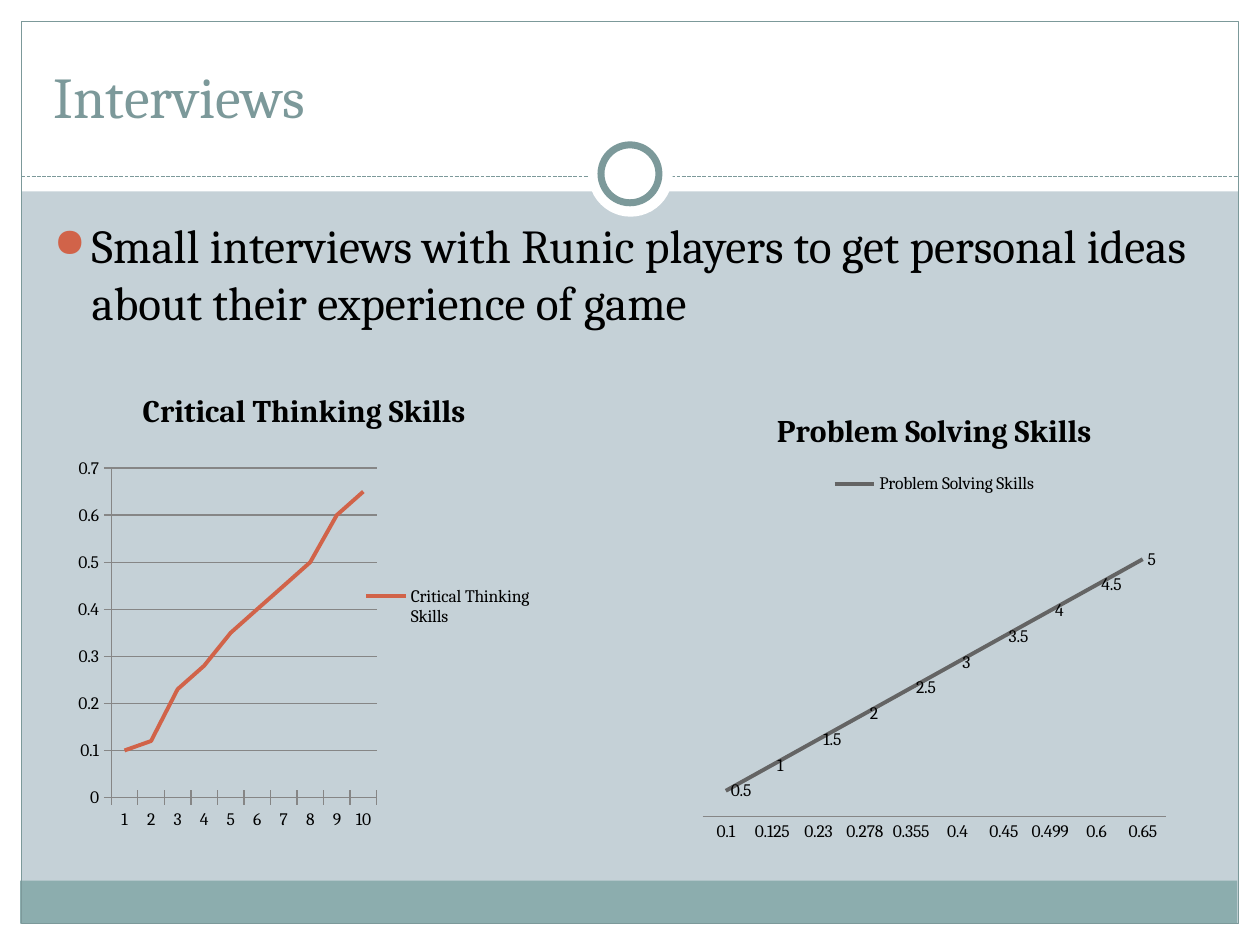
from lxml import etree
from pptx import Presentation
from pptx.chart.data import CategoryChartData
from pptx.dml.color import RGBColor
from pptx.enum.chart import (XL_CHART_TYPE, XL_LABEL_POSITION,
                             XL_LEGEND_POSITION, XL_TICK_MARK)
from pptx.enum.dml import MSO_LINE
from pptx.enum.shapes import MSO_CONNECTOR, MSO_SHAPE
from pptx.enum.text import MSO_ANCHOR
from pptx.oxml.ns import qn
from pptx.util import Inches, Pt

LINE = XL_CHART_TYPE.LINE
RIGHT, TOP = XL_LEGEND_POSITION.RIGHT, XL_LEGEND_POSITION.TOP
CROSS, NONE = XL_TICK_MARK.CROSS, XL_TICK_MARK.NONE
RECT, OVAL = MSO_SHAPE.RECTANGLE, MSO_SHAPE.OVAL
FONT = "Cambria"
COLORS = {
    "back": "C5D1D7", "white": "FFFFFF", "band": "8CADAE", "frame": "7C999A",
    "black": "000000", "red": "D16349", "gray": "646464", "axis": "868686",
}


def color(name):
    return RGBColor.from_string(COLORS[name])


def add_shape(slide, kind, box, fill=None, line=None, width=0.75):
    shape = slide.shapes.add_shape(kind, *map(Inches, box))
    shape.shadow.inherit = False
    if fill:
        shape.fill.solid()
        shape.fill.fore_color.rgb = color(fill)
    else:
        shape.fill.background()
    if line:
        shape.line.color.rgb = color(line)
        shape.line.width = Pt(width)
    else:
        shape.line.fill.background()


def add_rule(slide, left, right, y):
    rule = slide.shapes.add_connector(
        MSO_CONNECTOR.STRAIGHT, Inches(left), Inches(y), Inches(right), Inches(y))
    rule.line.color.rgb = color("frame")
    rule.line.width = Pt(0.75)
    rule.line.dash_style = MSO_LINE.SQUARE_DOT
    etree.SubElement(rule._element.spPr, qn("a:effectLst"))


def set_font(font, size, ink="black", bold=False):
    font.name, font.size, font.bold = FONT, Pt(size), bold
    font.color.rgb = color(ink)


def add_bullet(para, ink, scale, indent):
    props = para._p.get_or_add_pPr()
    props.set("marL", str(Inches(indent)))
    props.set("indent", str(-Inches(indent)))
    tint = etree.SubElement(props, qn("a:buClr"))
    etree.SubElement(tint, qn("a:srgbClr"), val=COLORS[ink])
    etree.SubElement(props, qn("a:buSzPct"), val=str(scale * 1000))
    etree.SubElement(props, qn("a:buChar"), char="●")


def add_text(slide, text, box, size, ink="black", anchor=MSO_ANCHOR.TOP,
             bullet=None, before=0):
    frame = slide.shapes.add_textbox(*map(Inches, box)).text_frame
    frame.word_wrap = True
    frame.vertical_anchor = anchor
    para = frame.paragraphs[0]
    para.space_before = Pt(before)
    run = para.add_run()
    run.text = text
    set_font(run.font, size, ink)
    if bullet:
        add_bullet(para, bullet, 85, 0.3)


def set_plot(chart, box):
    """Fix the inner plot area as fractions of the chart."""
    area = chart._chartSpace.chart.plotArea
    for old in area.findall(qn("c:layout")):
        area.remove(old)
    layout = etree.Element(qn("c:layout"))
    area.insert(0, layout)
    manual = etree.SubElement(layout, qn("c:manualLayout"))
    parts = [("layoutTarget", "inner"), ("xMode", "edge"), ("yMode", "edge")]
    for tag, val in parts + list(zip("xywh", box)):
        etree.SubElement(manual, qn("c:" + tag), val=str(val))


def add_chart(slide, name, box, cats, vals, ink, legend):
    data = CategoryChartData()
    data.categories = cats
    data.add_series(name, vals)
    chart = slide.shapes.add_chart(LINE, *map(Inches, box), data).chart
    set_font(chart.font, 10)
    chart.has_title = True
    title = chart.chart_title.text_frame
    title.text = name
    set_font(title.paragraphs[0].runs[0].font, 18, bold=True)
    chart.has_legend = True
    chart.legend.position = legend
    chart.legend.include_in_layout = False
    chart.plots[0].vary_by_categories = False
    series = chart.plots[0].series[0]
    series.smooth = False
    series.format.line.color.rgb = color(ink)
    series.format.line.width = Pt(2.25)
    for axis in (chart.category_axis, chart.value_axis):
        axis.major_tick_mark = CROSS
        axis.minor_tick_mark = NONE
        axis.format.line.color.rgb = color("axis")
        axis.format.line.width = Pt(0.75)
    return chart


def add_frame(slide):
    # White margins, then the foot band and the outline
    for box in ((0, 7.33, 10, 0.17), (0, 0, 10, 1.52),
                (0, 0, 0.17, 7.5), (9.83, 0, 0.17, 7.5)):
        add_shape(slide, RECT, box, fill="white")
    add_shape(slide, RECT, (0.16, 6.99, 9.66, 0.34), fill="band")
    add_shape(slide, RECT, (0.17, 0.17, 9.66, 7.16), line="frame")
    # Dashed rule with a ring at its middle
    add_rule(slide, 0.17, 9.83, 1.4)
    add_shape(slide, OVAL, (4.67, 1.05, 0.67, 0.67), fill="white")
    add_shape(slide, OVAL, (4.77, 1.15, 0.46, 0.46), fill="white",
              line="frame", width=4)


def main():
    deck = Presentation()
    deck.slide_width, deck.slide_height = Inches(10), Inches(7.5)
    slide = deck.slides.add_slide(deck.slide_layouts[6])
    slide.background.fill.solid()
    slide.background.fill.fore_color.rgb = color("back")
    add_frame(slide)

    # Title and body
    add_text(slide, "Interviews", (0.33, 0.25, 9.33, 0.83), 33, "frame",
             anchor=MSO_ANCHOR.BOTTOM)
    add_text(slide, "Small interviews with Runic players to get personal ideas "
             "about their experience of game", (0.33, 1.67, 9.3, 5), 27,
             bullet="red", before=5.4)

    # Left chart: axes and grid
    think = add_chart(
        slide, "Critical Thinking Skills", (0.5, 2.92, 3.83, 3.79),
        [str(n) for n in range(1, 11)],
        [0.1, 0.12, 0.23, 0.28, 0.35, 0.4, 0.45, 0.5, 0.6, 0.65], "red", RIGHT)
    grid = think.value_axis.major_gridlines.format.line
    grid.color.rgb = color("axis")
    grid.width = Pt(0.75)
    set_plot(think, (0.1, 0.21, 0.55, 0.69))

    # Right chart: value labels in place of the value axis
    solve = add_chart(
        slide, "Problem Solving Skills", (5.5, 3.08, 3.83, 3.67),
        ["0.1", "0.125", "0.23", "0.278", "0.355",
         "0.4", "0.45", "0.499", "0.6", "0.65"],
        [n / 2 for n in range(1, 11)], "gray", TOP)
    solve.category_axis.major_tick_mark = NONE
    solve.value_axis.has_major_gridlines = False
    solve.value_axis.visible = False
    labels = solve.plots[0].series[0].data_labels
    labels.show_value = True
    labels.position = XL_LABEL_POSITION.RIGHT
    set_font(labels.font, 10)

    deck.save("out.pptx")


if __name__ == "__main__":
    main()
